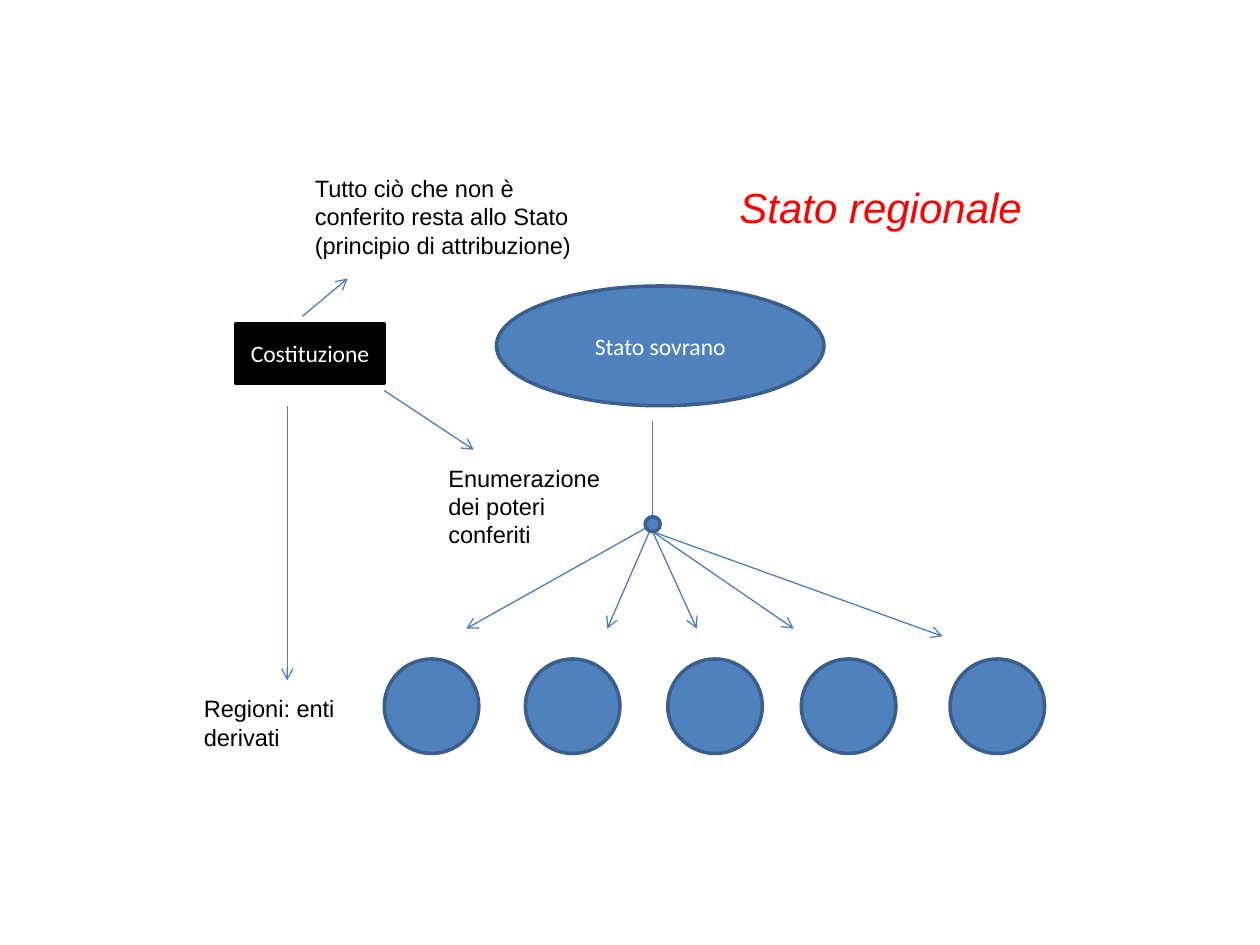
"""Build the slide on the regional state, with lengths in percent of the slide's size."""
import pptx
import pptx.util
import pptx.dml.color
import pptx.enum.shapes
import pptx.enum.text
import pptx.oxml.ns
from lxml import etree

WIDTH, HEIGHT = pptx.util.Inches(10), pptx.util.Inches(7.5)
COLORS = {"blue": "4F81BD", "edge": "3A5F8C", "arrow": "4B7EBC",
          "black": "000000", "white": "FFFFFF", "red": "FF0000"}
BODY = {"name": "Arial", "size": pptx.util.Pt(13.5)}
LABEL = {"name": "Calibri", "size": pptx.util.Pt(13.5)}
TITLE = {"name": "Arial", "size": pptx.util.Pt(24), "italic": True}
SHAPES = pptx.enum.shapes.MSO_SHAPE


def color(name):
    return pptx.dml.color.RGBColor.from_string(COLORS[name])


def place(*lengths):
    return [round(n * (HEIGHT if i % 2 else WIDTH) / 100) for i, n in enumerate(lengths)]


def write(tf, text, font, ink):
    tf.word_wrap = True
    p = tf.paragraphs[0]
    r = p.add_run()
    r.text = text
    for key, value in font.items():
        setattr(r.font, key, value)
    r.font.color.rgb = color(ink)
    return p


def add_text(s, box, text, font=BODY, ink="black"):
    sp = s.shapes.add_textbox(*place(*box))
    write(sp.text_frame, text, font, ink)
    sp.text_frame.auto_size = pptx.enum.text.MSO_AUTO_SIZE.SHAPE_TO_FIT_TEXT


def add_node(s, box, text="", kind=SHAPES.OVAL, fill="blue", edge="edge"):
    sp = s.shapes.add_shape(kind, *place(*box))
    sp.shadow.inherit = False
    sp.fill.solid()
    sp.fill.fore_color.rgb = color(fill)
    sp.line.color.rgb = color(edge)
    sp.line.width = pptx.util.Pt(2)
    if text:
        p = write(sp.text_frame, text, LABEL, "white")
        p.alignment = pptx.enum.text.PP_ALIGN.CENTER
        sp.text_frame.vertical_anchor = pptx.enum.text.MSO_ANCHOR.MIDDLE


def add_line(s, start, end, arrow=True):
    straight = pptx.enum.shapes.MSO_CONNECTOR.STRAIGHT
    sp = s.shapes.add_connector(straight, *place(*start, *end))
    sp.line.color.rgb = color("arrow")
    sp.line.width = pptx.util.Pt(0.75)
    if arrow:
        etree.SubElement(sp.line._get_or_add_ln(), pptx.oxml.ns.qn("a:tailEnd"), type="arrow")
    etree.SubElement(sp._element.spPr, pptx.oxml.ns.qn("a:effectLst"))


def add_regions(s):
    for left in (30.5, 41.7, 53, 63.6, 75.4):
        add_node(s, (left, 69.73, 7.5, 10))
    add_text(s, (15.2, 72.8, 12.4, 7.47), "Regioni: enti derivati")


def add_constitution(s):
    add_node(s, (18.7, 34.27, 11.8, 6.27), "Costituzione", SHAPES.RECTANGLE, "black", "black")
    add_text(s, (34.6, 48.4, 15.9, 10.4), "Enumerazione dei poteri conferiti")
    add_text(s, (24, 17.73, 24.8, 10.4),
             "Tutto ciò che non è conferito resta allo Stato (principio di attribuzione)")
    for start, end in (((22.8, 42.93), (22.8, 72)),
                       ((24, 33.47), (27.6, 29.47)),
                       ((30.5, 41.33), (37.6, 47.6))):
        add_line(s, start, end)


def add_state(s):
    add_node(s, (39.4, 30.27, 26, 12.67), "Stato sovrano")
    hub, low_hub = (51.8, 55.47), (51.8, 56.27)
    add_line(s, (51.8, 44.53), hub, arrow=False)
    for start, end in ((hub, (37, 66.53)), (hub, (48.2, 66.53)),
                       (low_hub, (55.3, 66.53)), (low_hub, (63, 66.53)),
                       (low_hub, (74.8, 67.33))):
        add_line(s, start, end)
    add_node(s, (51.2, 54.67, 1.2, 1.6))


def main():
    prs = pptx.Presentation()
    prs.slide_width, prs.slide_height = WIDTH, HEIGHT
    s = prs.slides.add_slide(prs.slide_layouts[6])
    add_regions(s)
    add_constitution(s)
    add_text(s, (57.7, 18.53, 26.6, 6.67), "Stato regionale", TITLE, "red")
    add_state(s)
    prs.save("out.pptx")


if __name__ == "__main__":
    main()
